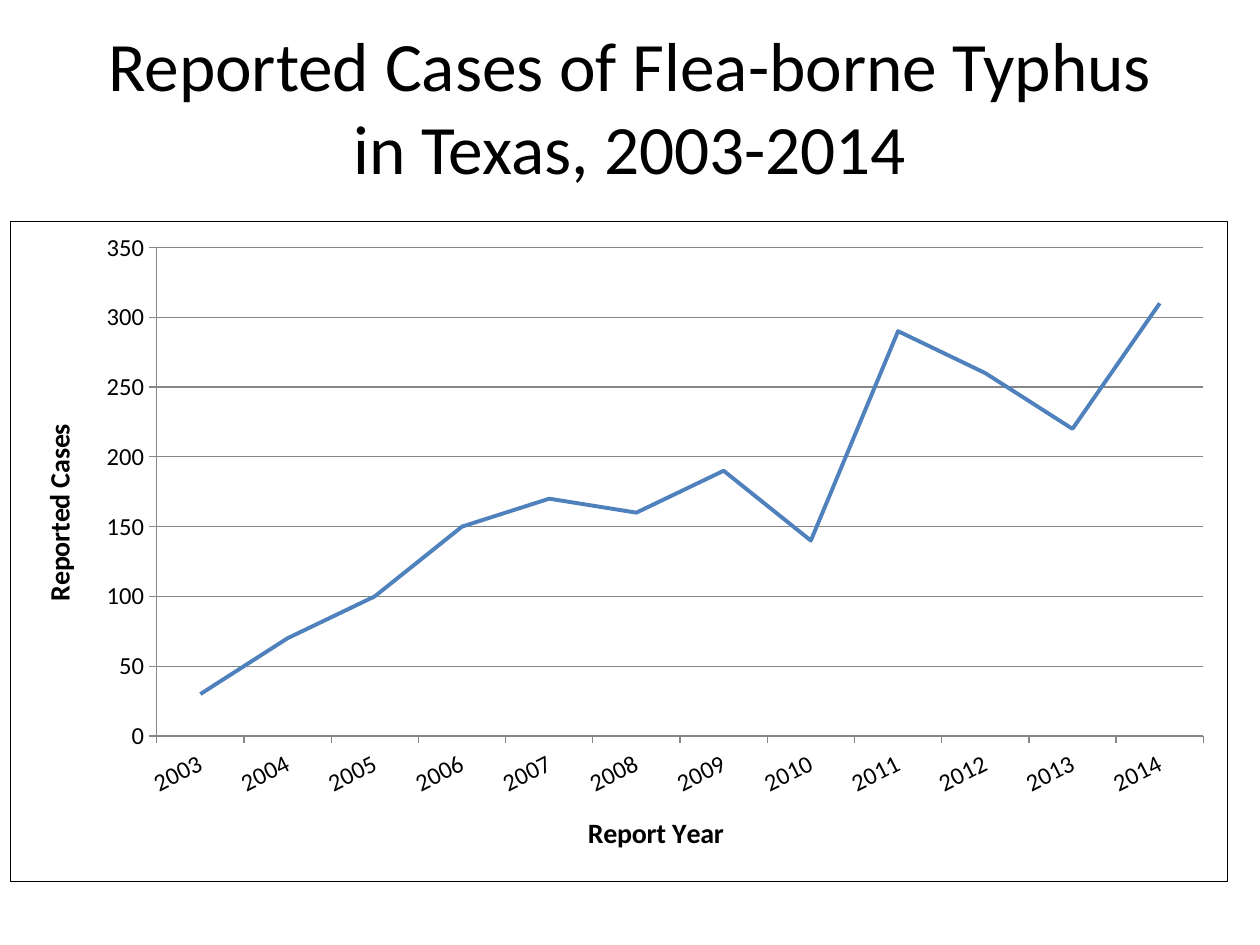
from pptx import Presentation
from pptx.chart.data import CategoryChartData as Data
from pptx.dml.color import RGBColor as RGB
from pptx.enum.chart import XL_CHART_TYPE as Kind, XL_TICK_MARK as Tick
from pptx.enum.text import MSO_ANCHOR as Anchor, PP_ALIGN as Align
from pptx.oxml import parse_xml
from pptx.oxml.ns import nsdecls, qn
from pptx.util import Inches, Pt

# Content
TITLE = "Reported Cases of Flea-borne Typhus in Texas, 2003-2014"
YEARS = [str(y) for y in range(2003, 2015)]
CASES = [30, 70, 100, 150, 170, 160, 190, 140, 290, 260, 220, 310]
COLORS = {"text": "000000", "line": "4F81BD", "grid": "868686"}
FONT = "Calibri"
TILT = -27  # degrees, year labels


def style(font, size, bold=False):
    looks = {"name": FONT, "size": Pt(size), "bold": bold}
    for key, val in looks.items():
        setattr(font, key, val)
    font.color.rgb = RGB.from_string(COLORS["text"])


def stroke(line, color, width):
    line.color.rgb = RGB.from_string(COLORS[color])
    line.width = Pt(width)


def place(node, index, inner=False, **box):
    """Set a manual layout, in fractions of the chart."""
    for old in node.findall(qn("c:layout")):
        node.remove(old)
    parts = '<c:layoutTarget val="inner"/>' if inner else ""
    parts += '<c:xMode val="edge"/><c:yMode val="edge"/>'
    parts += "".join(f'<c:{k} val="{v}"/>' for k, v in box.items())
    node.insert(index, parse_xml(
        f'<c:layout {nsdecls("c")}><c:manualLayout>{parts}'
        '</c:manualLayout></c:layout>'))


deck = Presentation()
deck.slide_width, deck.slide_height = Inches(10), Inches(7.5)
slide = deck.slides.add_slide(deck.slide_layouts[5])

# Title
title = slide.shapes.title
spot = {"left": 0.5, "top": 0.17, "width": 9, "height": 1.33}
for key, val in spot.items():
    setattr(title, key, Inches(val))
frame = title.text_frame
frame.text = TITLE
frame.word_wrap = True
frame.vertical_anchor = Anchor.MIDDLE
frame.paragraphs[0].alignment = Align.CENTER
style(frame.paragraphs[0].runs[0].font, 39.6)

# Line chart
data = Data()
data.categories = YEARS
data.add_series("Series 1", CASES)
box = [Inches(n) for n in (0.08, 1.75, 9.67, 5.25)]
chart = slide.shapes.add_chart(Kind.LINE, *box, data).chart
chart.has_title = chart.has_legend = False
style(chart.font, 10)
plot = chart.plots[0]
plot.vary_by_categories = False
trend = plot.series[0]
trend.smooth = False
stroke(trend.format.line, "line", 2.25)

# Axes
axes = [
    (chart.category_axis, "Report Year", {"x": 0.47, "y": 0.89}),
    (chart.value_axis, "Reported Cases", {"x": 0.02, "y": 0.3}),
]
for axis, name, spot in axes:
    axis.major_tick_mark = Tick.OUTSIDE
    axis.minor_tick_mark = Tick.NONE
    style(axis.tick_labels.font, 14)
    stroke(axis.format.line, "grid", 0.75)
    head = axis.axis_title
    head.text_frame.text = name
    style(head.text_frame.paragraphs[0].runs[0].font, 16, True)
    place(head._element, 1, **spot)

years, count = chart.category_axis, chart.value_axis
years._element.find(qn("c:txPr")).find(qn("a:bodyPr")).set(
    "rot", str(TILT * 60000))
scale = {"minimum_scale": 0, "maximum_scale": 350, "major_unit": 50,
         "has_major_gridlines": True}
for key, val in scale.items():
    setattr(count, key, val)
stroke(count.major_gridlines.format.line, "grid", 0.75)

# Plot area and outer border
space = chart._chartSpace
area = space.find(qn("c:chart")).find(qn("c:plotArea"))
place(area, 0, inner=True, x=0.12, y=0.04, w=0.86, h=0.74)
space.find(qn("c:chart")).addnext(parse_xml(
    f'<c:spPr {nsdecls("c", "a")}><a:noFill/><a:ln w="{Pt(0.75)}"><a:solidFill>'
    f'<a:srgbClr val="{COLORS["text"]}"/></a:solidFill></a:ln></c:spPr>'))

deck.save("out.pptx")
